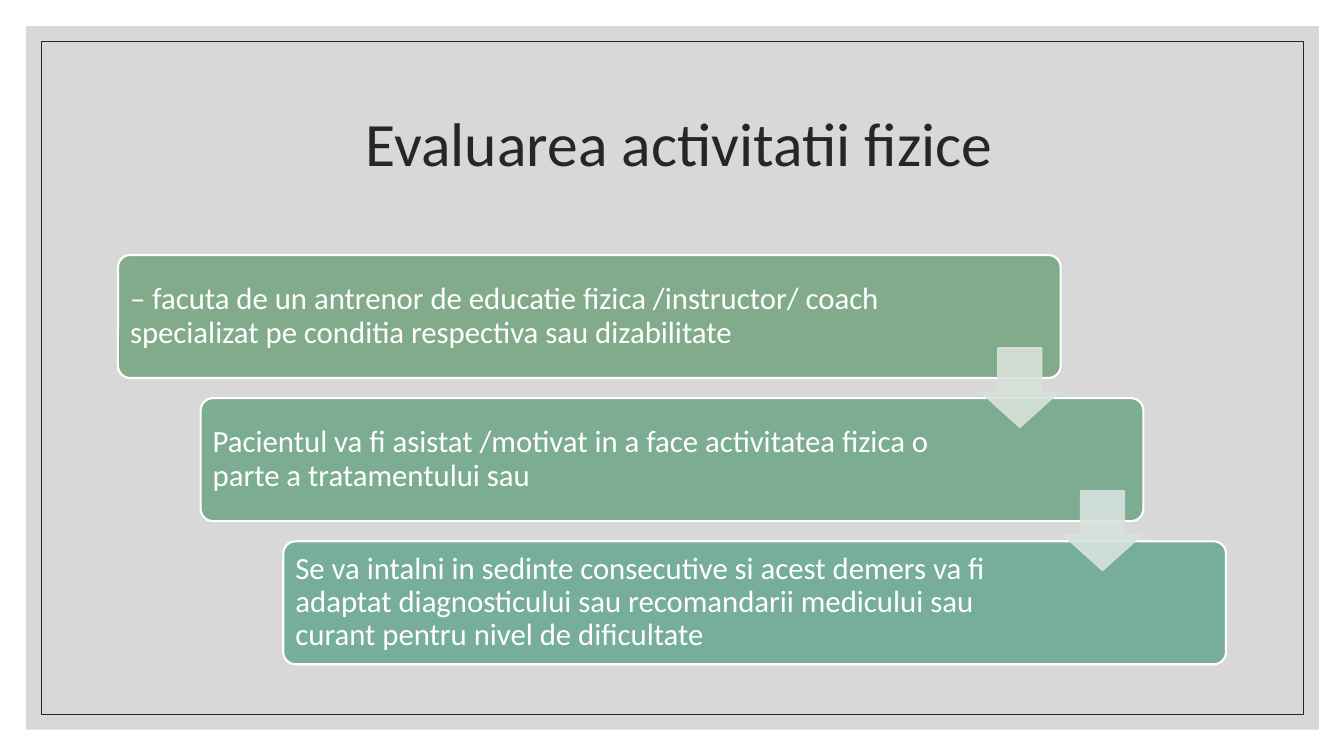
from lxml.etree import SubElement
from pptx import Presentation
from pptx.dml.color import RGBColor
from pptx.enum.shapes import MSO_SHAPE
from pptx.enum.text import MSO_ANCHOR, PP_ALIGN
from pptx.oxml.ns import qn
from pptx.util import Inches, Pt

COLORS = {
    "panel": "BFBFBF",
    "dark": "262626",
    "white": "FFFFFF",
    "arrow_line": "D8E2DA",
}
FONT = "Calibri"

# Each step: text, fill, text width
STEPS = [
    ("– facuta de un antrenor de educatie fizica /instructor/ coach "
     "specializat pe conditia respectiva sau dizabilitate", "82AB8C", 8.03),
    ("Pacientul va fi asistat /motivat in a face activitatea fizica o "
     "parte a tratamentului sau", "7CAC92", 7.66),
    ("Se va intalni in sedinte consecutive si acest demers va fi "
     "adaptat diagnosticului sau recomandarii medicului sau "
     "curant pentru nivel de dificultate", "76AD9B", 7.66),
]
ARROW_FILLS = ["D8E2DA", "D6E3DE"]

STEP_LEFT, STEP_TOP = 1.17, 2.53
STEP_WIDTH, STEP_HEIGHT = 9.35, 1.22
SHIFT_X, SHIFT_Y = 0.82, 1.42
TEXT_INSET = 0.03
ARROW_LEFT, ARROW_TOP, ARROW_SIZE = 9.72, 3.45, 0.79


def paint(fill, color, opacity=100):
    """Apply a solid colour with an opacity in percent."""
    fill.solid()
    fill.fore_color.rgb = RGBColor.from_string(color)
    if opacity < 100:
        color_element = fill._xPr.find(qn("a:solidFill"))[0]
        SubElement(color_element, qn("a:alpha"), val=str(opacity * 1000))


def add_block(slide, kind, box, fill=None, line=None, line_width=1,
              opacity=100, adjustments=()):
    shape = slide.shapes.add_shape(kind, *map(Inches, box))
    shape.shadow.inherit = False
    for index, value in enumerate(adjustments):
        shape.adjustments[index] = value
    if fill:
        paint(shape.fill, fill, opacity)
    else:
        shape.fill.background()
    if line:
        paint(shape.line.fill, line, opacity)
        shape.line.width = Pt(line_width)
    else:
        shape.line.fill.background()


def add_text(slide, box, text, size, color, align=PP_ALIGN.LEFT,
             inset_x=0.09, inset_y=0.09):
    frame = slide.shapes.add_textbox(*map(Inches, box)).text_frame
    frame.word_wrap = True
    frame.vertical_anchor = MSO_ANCHOR.MIDDLE
    frame.margin_left = frame.margin_right = Inches(inset_x)
    frame.margin_top = frame.margin_bottom = Inches(inset_y)
    paragraph = frame.paragraphs[0]
    paragraph.text = text
    paragraph.alignment = align
    paragraph.line_spacing = 0.9
    paragraph.font.name = FONT
    paragraph.font.size = Pt(size)
    paragraph.font.color.rgb = RGBColor.from_string(color)


def add_step(slide, index, text, fill, text_width):
    left = STEP_LEFT + index * SHIFT_X
    top = STEP_TOP + index * SHIFT_Y
    add_block(slide, MSO_SHAPE.ROUNDED_RECTANGLE,
              (left, top, STEP_WIDTH, STEP_HEIGHT), fill,
              COLORS["white"], 1.5, adjustments=[0.1])
    add_text(slide, (left + TEXT_INSET, top + TEXT_INSET, text_width,
                     STEP_HEIGHT - 2 * TEXT_INSET), text, 22, COLORS["white"])


def add_arrow(slide, index, fill):
    box = (ARROW_LEFT + index * SHIFT_X, ARROW_TOP + index * SHIFT_Y,
           ARROW_SIZE, ARROW_SIZE)
    add_block(slide, MSO_SHAPE.DOWN_ARROW, box, fill, COLORS["arrow_line"],
              opacity=90, adjustments=[0.55, 0.45])


def main():
    presentation = Presentation()
    presentation.slide_width = Inches(13.33)
    presentation.slide_height = Inches(7.5)
    slide = presentation.slides.add_slide(presentation.slide_layouts[6])

    # Background panel and thin frame
    add_block(slide, MSO_SHAPE.RECTANGLE, (0.26, 0.26, 12.82, 6.98),
              COLORS["panel"], opacity=60)
    add_block(slide, MSO_SHAPE.RECTANGLE, (0.41, 0.41, 12.52, 6.68),
              line=COLORS["dark"], line_width=0.5)

    # Title
    add_text(slide, (1.17, 0.7, 11, 1.5), " Evaluarea activitatii fizice", 44,
             COLORS["dark"], PP_ALIGN.CENTER, inset_x=0.1, inset_y=0.05)

    # Staggered steps, then the arrows on top of them
    for index, (text, fill, text_width) in enumerate(STEPS):
        add_step(slide, index, text, fill, text_width)
    for index, fill in enumerate(ARROW_FILLS):
        add_arrow(slide, index, fill)

    presentation.save("out.pptx")


if __name__ == "__main__":
    main()
